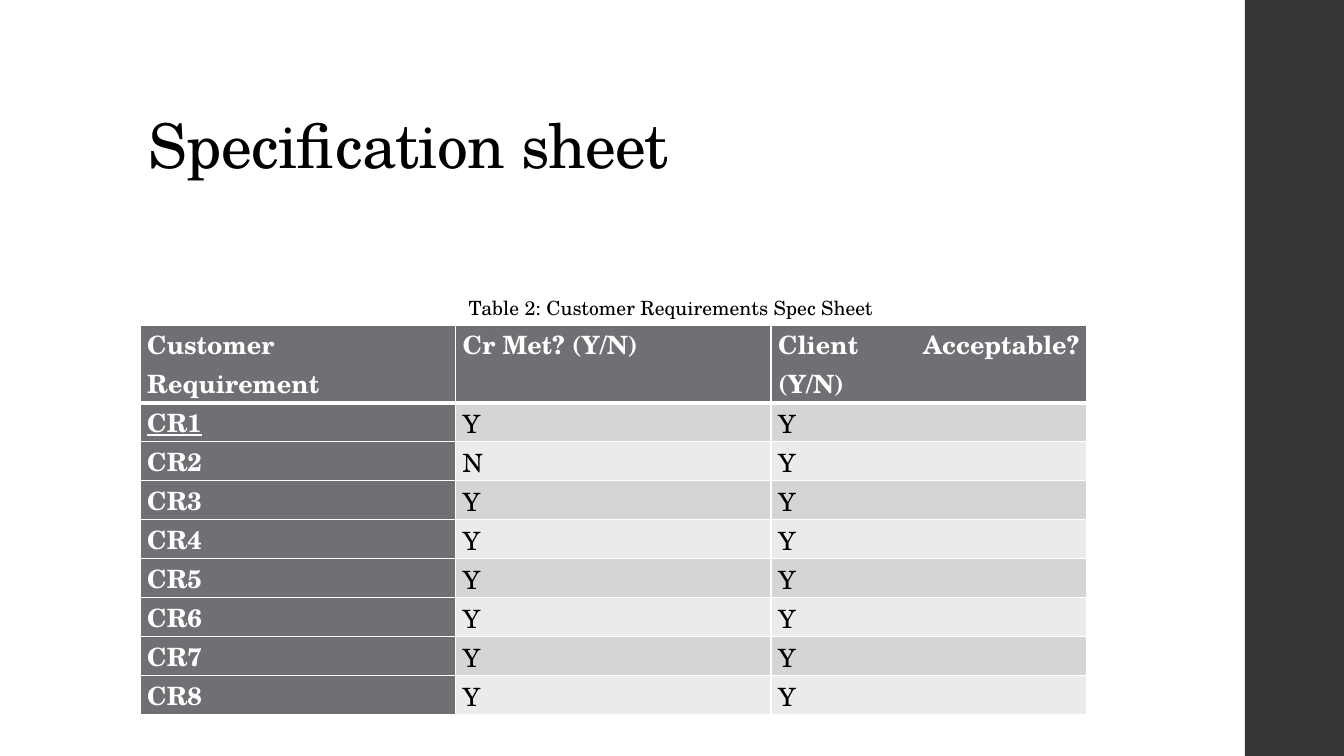
import dataclasses

import lxml.etree
import pptx
import pptx.dml.color
import pptx.enum.text
import pptx.oxml.ns
import pptx.slide
import pptx.table
import pptx.text.text
import pptx.util

Cm = pptx.util.Cm
Pt = pptx.util.Pt
RGBColor = pptx.dml.color.RGBColor
Anchor = pptx.enum.text.MSO_ANCHOR
Align = pptx.enum.text.PP_ALIGN
qn = pptx.oxml.ns.qn

BLACK = RGBColor(0x00, 0x00, 0x00)
WHITE = RGBColor(0xFF, 0xFF, 0xFF)
DARK = RGBColor(0x35, 0x35, 0x37)
GREY = RGBColor(0x6F, 0x6F, 0x74)
BANDS = (RGBColor(0xD5, 0xD5, 0xD6), RGBColor(0xEB, 0xEB, 0xEB))
FONT = "TeX Gyre Schola"

HEADS = ("Customer Requirement", "Cr Met? (Y/N)", "Client Acceptable? (Y/N)")
MET = "YNYYYYYY"
COL = Cm(7.95)
ROW = Cm(0.98)


@dataclasses.dataclass
class Label:
    text: str
    left: float
    top: float
    width: float
    height: float
    size: float
    wrap: bool = True
    anchor: Anchor = Anchor.TOP
    lead: float | None = None
    track: int = 0


LABELS = (
    Label("Specification sheet", 3.5, 1.02, 26.92, 3.68, 44,
          anchor=Anchor.BOTTOM, lead=0.9, track=-50),
    Label("Table 2: Customer Requirements Spec Sheet",
          11.56, 7.32, 10.77, 0.86, 14, wrap=False),
)


def write(frame: pptx.text.text.TextFrame, text: str, *, size: float,
          color: RGBColor = BLACK, bold: bool = False, line: bool = False,
          align: Align = Align.LEFT, lead=None, track: int = 0) -> None:
    para = frame.paragraphs[0]
    para.alignment = align
    para.line_spacing = lead
    run = para.add_run()
    run.text = text
    font = run.font
    font.name, font.size = FONT, Pt(size)
    font.bold, font.underline = bold, line
    font.color.rgb = color
    if track:
        run._r.get_or_add_rPr().set("spc", str(track))


def draw_label(slide: pptx.slide.Slide, label: Label) -> None:
    box = slide.shapes.add_textbox(Cm(label.left), Cm(label.top),
                                   Cm(label.width), Cm(label.height))
    frame = box.text_frame
    frame.word_wrap = label.wrap
    frame.vertical_anchor = label.anchor
    write(frame, label.text, size=label.size, lead=label.lead,
          track=label.track)


def edge(cell: pptx.table._Cell, side: str, width: float) -> None:
    line = lxml.etree.SubElement(cell._tc.get_or_add_tcPr(),
                                 qn(f"a:ln{side}"), w=str(Pt(width)))
    fill = lxml.etree.SubElement(line, qn("a:solidFill"))
    lxml.etree.SubElement(fill, qn("a:srgbClr"), val=str(WHITE))


def draw_cell(cell: pptx.table._Cell, text: str, row: int, col: int) -> None:
    # Borders come before the fill; a thick rule lies under the header
    for side in "LRTB":
        thick = (row, side) in ((0, "B"), (1, "T"))
        edge(cell, side, 3 if thick else 1)
    head = row == 0 or col == 0
    cell.fill.solid()
    cell.fill.fore_color.rgb = GREY if head else BANDS[(row - 1) % 2]
    cell.margin_left = cell.margin_right = Cm(0.18)
    cell.margin_top = cell.margin_bottom = 0
    write(cell.text_frame, text, size=18, color=WHITE if head else BLACK,
          bold=head, line=text == "CR1", align=Align.JUSTIFY, lead=Pt(27.8))


def draw_table(slide: pptx.slide.Slide) -> None:
    rows = [HEADS] + [(f"CR{num}", met, "Y")
                      for num, met in enumerate(MET, 1)]
    table = slide.shapes.add_table(
        len(rows), len(HEADS), Cm(3.53), Cm(8.19),
        COL * len(HEADS), ROW * (len(rows) + 1)).table
    for col in table.columns:
        col.width = COL
    for row, texts in enumerate(rows):
        table.rows[row].height = ROW if row else ROW * 2
        for col, text in enumerate(texts):
            draw_cell(table.cell(row, col), text, row, col)


def main() -> None:
    deck = pptx.Presentation()
    deck.slide_width, deck.slide_height = Cm(33.87), Cm(19.05)
    slide = deck.slides.add_slide(deck.slide_layouts[6])

    # Side band
    band = slide.shapes.add_shape(
        pptx.enum.shapes.MSO_SHAPE.RECTANGLE,
        Cm(31.37), 0, Cm(2.5), deck.slide_height)
    band.shadow.inherit = False
    band.fill.solid()
    band.fill.fore_color.rgb = DARK
    band.line.fill.background()

    # Title, table and caption
    title, note = LABELS
    draw_label(slide, title)
    draw_table(slide)
    draw_label(slide, note)

    deck.save("out.pptx")


if __name__ == "__main__":
    main()
